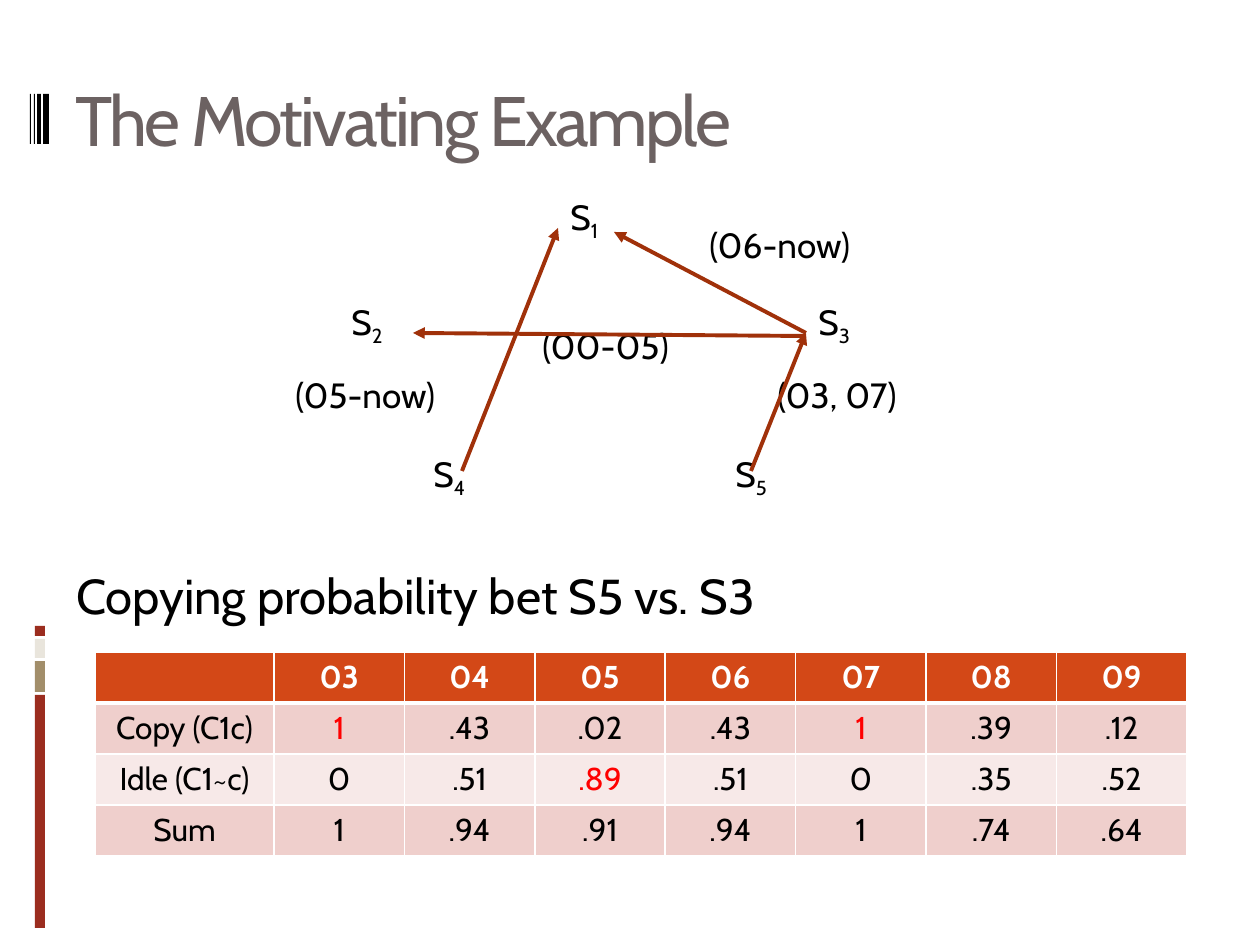
from lxml import etree
from pptx import Presentation
from pptx.dml.color import RGBColor
from pptx.enum.shapes import MSO_CONNECTOR, MSO_SHAPE
from pptx.enum.text import MSO_ANCHOR, PP_ALIGN
from pptx.oxml.ns import qn
from pptx.util import Emu, Pt

RECT, STRAIGHT = MSO_SHAPE.RECTANGLE, MSO_CONNECTOR.STRAIGHT
MIDDLE, TOP, CENTER = MSO_ANCHOR.MIDDLE, MSO_ANCHOR.TOP, PP_ALIGN.CENTER
FONT, BLACK, WHITE, RED, ARROW = "Cabin", "000000", "FFFFFF", "FF0000", "A0310A"

# Content; lengths in px, 126 to the inch
TITLE = "The Motivating Example"
SUBTITLE = "Copying probability bet S5 vs. S3"
SIDE_BARS = [  # top, height, colour
    (695, 233, "9B2D1F"), (661, 31, "A28E6A"), (639, 19, "E9E5DC"), (626, 10, "9B2D1F")]
TITLE_BARS = [(43, 6), (37, 4), (34, 1), (30, 1)]  # left, width
SOURCES = [("1", 558, 189), ("2", 339, 294), ("4", 421, 446), ("3", 806, 294), ("5", 723, 446)]
PERIODS = [("(00-05)", 530, 318), ("(03, 07)", 765, 367),
           ("(06-now)", 697, 217), ("(05-now)", 283, 367)]
ARROWS = [  # from copier to source
    (806, 333, 614, 232), (751, 471, 806, 333), (462, 471, 558, 228), (806, 336, 413, 333)]
TABLE = [
    ["", "03", "04", "05", "06", "07", "08", "09"],
    ["Copy (C1c)", "1", ".43", ".02", ".43", "1", ".39", ".12"],
    ["Idle (C1~c)", "0", ".51", ".89", ".51", "0", ".35", ".52"],
    ["Sum", "1", ".94", ".91", ".94", "1", ".74", ".64"]]
ROW_FILLS = ["D34817", "EFCFCC", "F7E9E8", "EFCFCC"]
HIGHLIGHTS = {(1, 1), (1, 5), (2, 3)}
TABLE_LEFT, TABLE_TOP, TABLE_W, LABEL_W, ROW_H = 95, 652, 1092, 179, 51


def px(n):
    return Emu(round(n * 914400 / 126))


def rgb(value):
    return RGBColor.from_string(value)


def add_run(p, text, size, color=BLACK, bold=False):
    r = p.add_run()
    r.text = text
    r.font.name, r.font.size, r.font.bold = FONT, Pt(size), bold
    r.font.color.rgb = rgb(color)
    return r


def add_bar(left, top, width, height, color):
    s = slide.shapes.add_shape(RECT, px(left), px(top), px(width), px(height))
    s.shadow.inherit = False
    s.fill.solid()
    s.fill.fore_color.rgb = rgb(color)
    s.line.fill.background()


def add_text(left, top, width, height, text, size, color=BLACK, anchor=TOP):
    s = slide.shapes.add_textbox(px(left), px(top), px(width), px(height))
    tf = s.text_frame
    tf.word_wrap, tf.vertical_anchor = True, anchor
    return s, add_run(tf.paragraphs[0], text, size, color)


def add_arrow(x1, y1, x2, y2):
    c = slide.shapes.add_connector(STRAIGHT, px(x1), px(y1), px(x2), px(y2))
    c.line.color.rgb, c.line.width = rgb(ARROW), Pt(2.25)
    etree.SubElement(c.line._get_or_add_ln(), qn("a:tailEnd"), type="triangle")
    etree.SubElement(c._element.spPr, qn("a:effectLst"))


def set_borders(cell, bottom):
    tcPr = cell._tc.get_or_add_tcPr()
    widths = {"lnL": 1, "lnR": 1, "lnT": 1, "lnB": bottom}
    for i, (tag, width) in enumerate(widths.items()):
        ln = etree.Element(qn("a:" + tag), w=str(Pt(width)))
        fill = etree.SubElement(ln, qn("a:solidFill"))
        etree.SubElement(fill, qn("a:srgbClr"), val=WHITE)
        tcPr.insert(i, ln)


prs = Presentation()
prs.slide_width, prs.slide_height = px(1260), px(945)
slide = prs.slides.add_slide(prs.slide_layouts[6])

# Decorative bars
for top, height, color in SIDE_BARS:
    add_bar(35, top, 10, height, color)
for left, width in TITLE_BARS:
    add_bar(left, 94, width, 50, BLACK)

# Body and title
body, _ = add_text(64, 199, 1196, 724, SUBTITLE, 28)
body.fill.solid()
body.fill.fore_color.rgb = rgb(WHITE)
body.text_frame.margin_top = px(366)
_, r = add_text(63, 29, 1134, 179, TITLE, 40, "6C6262", MIDDLE)
r._r.get_or_add_rPr().set("spc", "-150")

# Probability table
table = slide.shapes.add_table(len(TABLE), len(TABLE[0]), px(TABLE_LEFT), px(TABLE_TOP),
                               px(TABLE_W), px(ROW_H * len(TABLE))).table
year_w = (TABLE_W - LABEL_W) / (len(TABLE[0]) - 1)
for j, column in enumerate(table.columns):
    column.width = px(year_w if j else LABEL_W)
for i, values in enumerate(TABLE):
    table.rows[i].height = px(ROW_H)
    header = i == 0
    for j, value in enumerate(values):
        cell = table.cell(i, j)
        cell.fill.solid()
        cell.fill.fore_color.rgb = rgb(ROW_FILLS[i])
        set_borders(cell, 3 if header else 1)
        p = cell.text_frame.paragraphs[0]
        p.alignment = CENTER
        color = WHITE if header else RED if (i, j) in HIGHLIGHTS else BLACK
        if value:
            add_run(p, value, 18, color, header)

# Copying graph
for number, left, top in SOURCES:
    s, _ = add_text(left, top, 74, 78, "S", 20)
    r = add_run(s.text_frame.paragraphs[0], number, 20)
    r._r.get_or_add_rPr().set("baseline", "-25000")
for text, left, top in PERIODS:
    add_text(left, top, 205 if "now" in text else 170, 78, text, 20)
for ends in ARROWS:
    add_arrow(*ends)

prs.save("out.pptx")
